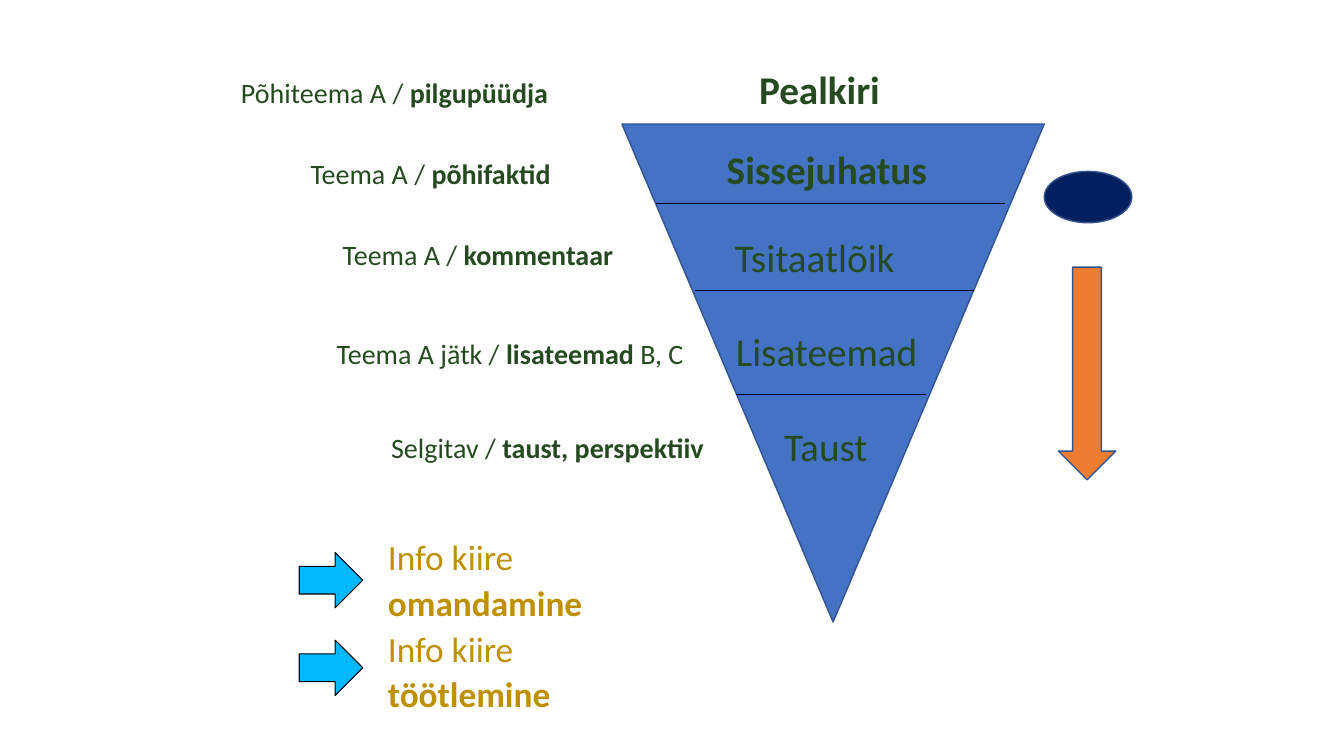
import pptx
import pptx.util
import pptx.dml.color
import pptx.enum.shapes
import pptx.enum.text
import lxml.etree

Pt = pptx.util.Pt
RGB = pptx.dml.color.RGBColor.from_string
SHAPE = pptx.enum.shapes.MSO_SHAPE

THEME = {
    "font": "Calibri",
    "text": "254A20", "gold": "BF9000", "black": "000000",
    "blue": "4472C4", "outline": "325491", "navy": "002060",
    "orange": "ED7D31", "cyan": "00B8FF",
    "level_size": 28, "label_size": 20, "info_size": 25.2,
}

prs = pptx.Presentation()
prs.slide_width, prs.slide_height = Pt(960), Pt(540)
s = prs.slides.add_slide(prs.slide_layouts[6])


def add_figure(kind, box, fill, line, weight):
    sp = s.shapes.add_shape(kind, *[Pt(v) for v in box])
    sp.shadow.inherit = False
    sp.fill.solid()
    sp.fill.fore_color.rgb = RGB(THEME[fill])
    sp.line.color.rgb = RGB(THEME[line])
    sp.line.width = Pt(weight)
    return sp


def add_text(box, parts, size, color):
    """Parts are (text, bold) pairs; a lone "\\n" is a line break."""
    sp = s.shapes.add_textbox(*[Pt(v) for v in box])
    tf = sp.text_frame
    tf.word_wrap = True
    p = tf.paragraphs[0]
    for text, bold in parts:
        if text == "\n":
            p.add_line_break()
            continue
        r = p.add_run()
        r.text = text
        r.font.name = THEME["font"]
        r.font.size = Pt(THEME[size])
        r.font.bold = bold
        r.font.color.rgb = RGB(THEME[color])
    return tf


# Inverted pyramid, with the key point and reading direction beside it
pyramid = add_figure(SHAPE.ISOSCELES_TRIANGLE, (444.2, 88.6, 301.7, 355.7),
                     "blue", "outline", 1)
pyramid.rotation = 180
add_figure(SHAPE.OVAL, (745.9, 122.4, 62.6, 36.7), "navy", "outline", 1)
add_figure(SHAPE.DOWN_ARROW, (756, 190.8, 41, 151.9), "orange", "outline", 1)

# Dividers between levels
for x1, x2, y in [(468.7, 717.8, 145.4), (496.1, 695.5, 207.4),
                  (525.6, 661.7, 281.5)]:
    divider = s.shapes.add_connector(pptx.enum.shapes.MSO_CONNECTOR.STRAIGHT,
                                     Pt(x1), Pt(y), Pt(x2), Pt(y))
    divider.line.color.rgb = RGB(THEME["black"])
    divider.line.width = Pt(0.75)
    lxml.etree.SubElement(
        divider._element.spPr,
        "{http://schemas.openxmlformats.org/drawingml/2006/main}effectLst")

# Level names and the explanations to their left
levels = [
    (542.2, 37.4, 255.6, [("Pealkiri", True)]),
    (519.1, 94.3, 176.4, [("Sissejuhatus", True)]),
    (524.9, 157, 176.4, [("Tsitaatlõik", False)]),
    (525.6, 224.6, 176.4, [("Lisateemad", False)]),
    (560.2, 292.3, 83.5, [("Taust", False)]),
]
labels = [
    (172.1, 47.5, 248.4, [("Põhiteema A / ", False), ("pilgupüüdja", True)]),
    (221.8, 105.1, 193, [("Teema A / ", False), ("põhifaktid", True)]),
    (244.8, 162.7, 218.9, [("Teema A / ", False), ("kommentaar", True)]),
    (240.5, 233.3, 294.5, [("Teema A jätk / ", False), ("lisateemad", True),
                           (" B, C", False)]),
    (279.4, 301, 261.4, [("Selgitav / ", False), ("taust, perspektiiv", True)]),
]
for rows, size in [(levels, "level_size"), (labels, "label_size")]:
    for x, y, w, parts in rows:
        tf = add_text((x, y, w, 51.1), parts, size, "text")
        tf.margin_left = tf.margin_right = tf.margin_top = tf.margin_bottom = 0
        p = tf.paragraphs[0]
        p.line_spacing = 1.28
        p.space_before = Pt(8)

# Benefits, each with an arrow
tf = add_text((270, 372.2, 209.5, 146.2),
              [("Info kiire ", False), ("omandamine", True), ("\n", False),
               ("Info kiire", False), ("\n", False), ("töötlemine", True)],
              "info_size", "gold")
tf.vertical_anchor = pptx.enum.text.MSO_ANCHOR.MIDDLE
tf.paragraphs[0].line_spacing = 1.08
for y in (394.6, 457.2):
    add_figure(SHAPE.RIGHT_ARROW, (213.8, y, 45.4, 39.6), "cyan", "black", 0.75)

prs.save("out.pptx")
